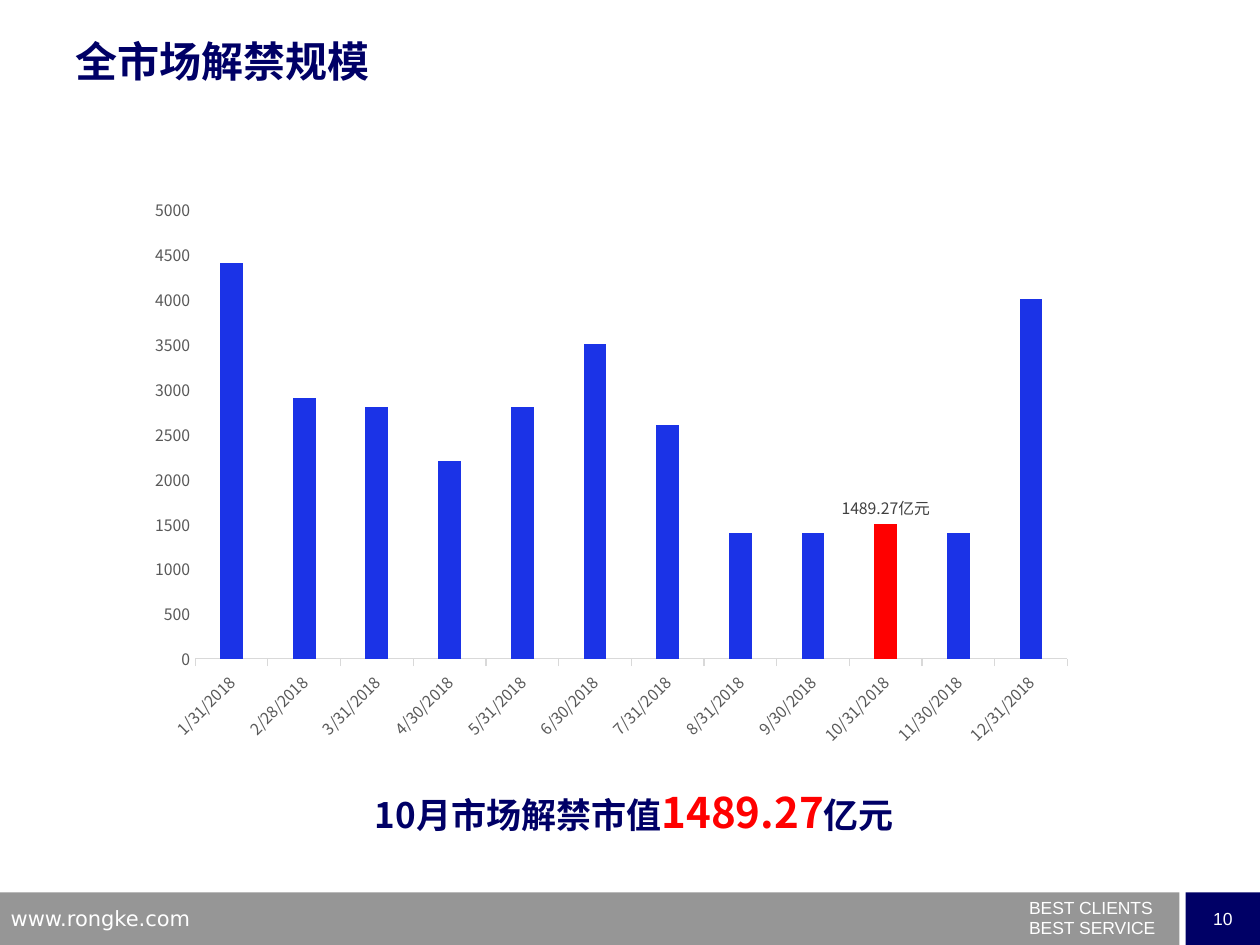
from dataclasses import dataclass

from lxml.etree import SubElement as Sub
from pptx import Presentation
from pptx.chart.data import CategoryChartData as Data
from pptx.dml.color import RGBColor as Rgb
from pptx.enum.chart import XL_CHART_TYPE as Kind
from pptx.enum.chart import XL_LABEL_POSITION as Spot
from pptx.enum.chart import XL_TICK_MARK as Tick
from pptx.enum.shapes import MSO_SHAPE as Shape
from pptx.enum.text import MSO_ANCHOR as Anchor
from pptx.enum.text import PP_ALIGN as Align
from pptx.oxml.ns import qn
from pptx.util import Pt

HEX = {
    "navy": "000066", "grey": "969696", "white": "FFFFFF", "red": "FF0000",
    "blue": "1B33E7", "axis": "595959", "rule": "D9D9D9", "label": "404040",
}
SANS = "Noto Sans CJK SC"
DATE = "m/d/yyyy"
# Month ends of 2018 as spreadsheet day numbers
SALES = {
    43131: 4400, 43159: 2900, 43190: 2800, 43220: 2200,
    43251: 2800, 43281: 3500, 43312: 2600, 43343: 1400,
    43373: 1400, 43404: 1500, 43434: 1400, 43465: 4000,
}
PEAK = list(SALES).index(43404)


@dataclass
class Box:
    left: float
    top: float
    width: float
    height: float

    def pts(self) -> list:
        return [Pt(n) for n in (self.left, self.top, self.width, self.height)]


@dataclass
class Run:
    text: str
    size: float
    color: str
    face: str = SANS
    bold: bool = False


def paint(fill, color: str) -> None:
    fill.solid()
    fill.fore_color.rgb = Rgb.from_string(HEX[color])


def style(font, size: float, color: str, face: str = SANS, bold: bool = False) -> None:
    """Set the font for both Latin and East Asian letters."""
    font.size, font.bold, font.name = Pt(size), bold, face
    paint(font.fill, color)
    Sub(font._rPr, qn("a:ea")).set("typeface", face)


def write(para, runs: list[Run]) -> None:
    for run in runs:
        piece = para.add_run()
        piece.text = run.text
        style(piece.font, run.size, run.color, run.face, run.bold)


def add_bar(slide, box: Box, color: str):
    bar = slide.shapes.add_shape(Shape.RECTANGLE, *box.pts())
    bar.shadow.inherit = False
    paint(bar.fill, color)
    bar.line.fill.background()
    return bar


def add_text(slide, box: Box, lines: list[list[Run]]):
    frame = slide.shapes.add_textbox(*box.pts()).text_frame
    frame.word_wrap = True
    for i, runs in enumerate(lines):
        write(frame.add_paragraph() if i else frame.paragraphs[0], runs)
    return frame


def place_plot(chart, box: Box, plot: Box) -> None:
    """Fix the inner plot area, given on the slide like the chart's box."""
    area = chart._chartSpace.chart.plotArea
    old = area.find(qn("c:layout"))
    if old is not None:
        area.remove(old)
    outer = Sub(area, qn("c:layout"))
    area.insert(0, outer)
    inner = Sub(outer, qn("c:manualLayout"))
    parts = {"layoutTarget": "inner", "xMode": "edge", "yMode": "edge",
             "x": (plot.left - box.left) / box.width,
             "y": (plot.top - box.top) / box.height,
             "w": plot.width / box.width, "h": plot.height / box.height}
    for name, val in parts.items():
        Sub(inner, qn(f"c:{name}")).set("val", str(val))


def add_chart(slide, box: Box, inner: Box) -> None:
    data = Data()
    data.categories = list(SALES)
    data.categories.number_format = DATE
    data.add_series("Series 1", list(SALES.values()))
    chart = slide.shapes.add_chart(Kind.COLUMN_CLUSTERED, *box.pts(), data).chart
    chart.has_legend = chart.has_title = False
    chart.font.size, chart.font.name = Pt(10), SANS
    place_plot(chart, box, inner)

    plot = chart.plots[0]
    plot.gap_width, plot.overlap, plot.vary_by_categories = 219, -27, False
    bars = plot.series[0]
    paint(bars.format.fill, "blue")
    peak = bars.points[PEAK]
    paint(peak.format.fill, "red")
    label = peak.data_label
    write(label.text_frame.paragraphs[0], [Run("1489.27亿元", 9, "label")])
    label.position = Spot.OUTSIDE_END

    cats, vals = chart.category_axis, chart.value_axis
    for axis in (cats, vals):
        style(axis.tick_labels.font, 9, "axis")
        axis.has_major_gridlines = False
    cats.major_tick_mark, vals.major_tick_mark = Tick.OUTSIDE, Tick.NONE
    paint(cats.format.line.fill, "rule")
    cats.format.line.width = Pt(0.75)
    cats.tick_labels.number_format = DATE
    cats.tick_labels.number_format_is_linked = False
    cats._element.txPr.bodyPr.set("rot", "-2700000")
    auto = cats._element.find(qn("c:auto"))
    if auto is not None:
        auto.set("val", "0")
    vals.format.line.fill.background()
    vals.minimum_scale, vals.maximum_scale, vals.major_unit = 0, 5000, 500


def add_foot(slide) -> None:
    top, high = 510, 30
    add_bar(slide, Box(0, top, 674, high), "grey")
    page = add_bar(slide, Box(677.5, top, 42.5, high), "navy").text_frame
    page.word_wrap = False
    page.vertical_anchor = Anchor.MIDDLE
    page.paragraphs[0].alignment = Align.CENTER
    write(page.paragraphs[0], [Run("10", 10, "white", "Arial")])

    motto = add_text(slide, Box(581, 514, 138, 25), [
        [Run(text, 10, "white", "Arial")] for text in ("BEST CLIENTS", "BEST SERVICE")])
    for para in motto.paragraphs:
        para.line_spacing = 0.5
    motto.paragraphs[1].space_before = Pt(5.75)
    add_text(slide, Box(-1, 514, 173.5, 19),
             [[Run("www.rongke.com", 12, "white", "DejaVu Sans")]])


def main() -> None:
    deck = Presentation()
    deck.slide_width, deck.slide_height = Pt(720), Pt(540)
    slide = deck.slides.add_slide(deck.slide_layouts[6])
    add_foot(slide)
    add_text(slide, Box(36, 16.5, 648, 90),
             [[Run("全市场解禁规模", 24, "navy", bold=True)]])
    add_text(slide, Box(207, 446, 341.5, 36), [[
        Run("10月市场解禁市值", 20, "navy", bold=True),
        Run("1489.27", 24, "red", bold=True),
        Run("亿元", 20, "navy", bold=True),
    ]])
    add_chart(slide, Box(78, 107.5, 543, 325.5), Box(111.5, 119.5, 498.5, 257))
    deck.save("out.pptx")


if __name__ == "__main__":
    main()
